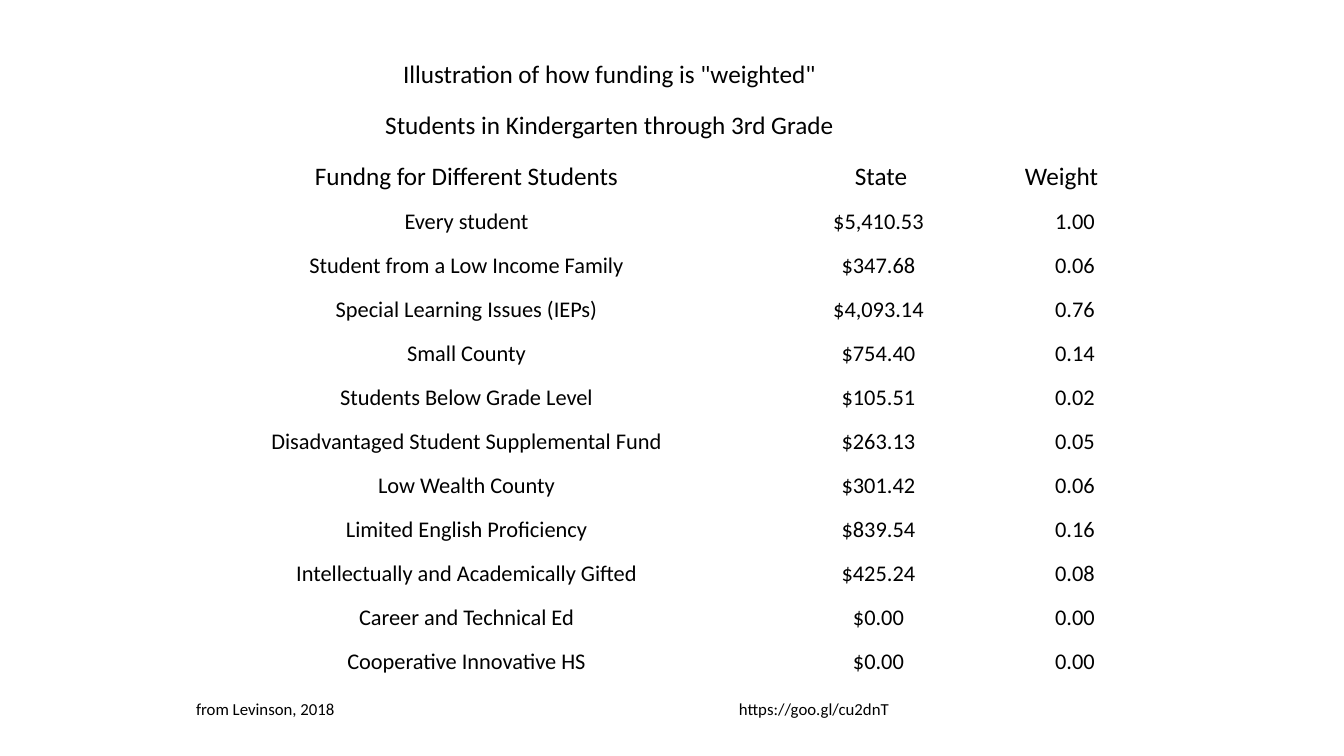
from dataclasses import dataclass

from pptx import Presentation
from pptx.dml.color import RGBColor
from pptx.enum.text import MSO_ANCHOR, PP_ALIGN
from pptx.util import Pt

PX = 12192000 / 1344


@dataclass(frozen=True)
class Theme:
    font: str = "Calibri"
    ink: RGBColor = RGBColor(0, 0, 0)
    heading: int = 18
    body: int = 16
    source: int = 12


THEME = Theme()

TITLES = ['Illustration of how funding is "weighted"',
          "Students in Kindergarten through 3rd Grade"]
HEADERS = ["Fundng for Different Students", "State", "Weight"]
FUNDING = [
    ("Every student", 5410.53, 1.00),
    ("Student from a Low Income Family", 347.68, 0.06),
    ("Special Learning Issues (IEPs)", 4093.14, 0.76),
    ("Small County", 754.40, 0.14),
    ("Students Below Grade Level", 105.51, 0.02),
    ("Disadvantaged Student Supplemental Fund", 263.13, 0.05),
    ("Low Wealth County", 301.42, 0.06),
    ("Limited English Proficiency", 839.54, 0.16),
    ("Intellectually and Academically Gifted", 425.24, 0.08),
    ("Career and Technical Ed", 0, 0),
    ("Cooperative Innovative HS", 0, 0),
]
SOURCE = ["from Levinson, 2018", "https://goo.gl/cu2dnT"]

COLUMN_WIDTHS = [543, 286, 107]
HEADING_HEIGHT, BODY_HEIGHT = 51, 44


def px(n):
    return round(n * PX)


def clear_cell(cell):
    """Remove the table style's fill and tighten the cell margins."""
    cell.fill.background()
    cell.vertical_anchor = MSO_ANCHOR.BOTTOM
    cell.margin_left = cell.margin_right = cell.margin_top = px(1)
    cell.margin_bottom = 0


def write_cell(cell, text, size, align=PP_ALIGN.CENTER):
    p = cell.text_frame.paragraphs[0]
    p.text = text
    p.alignment = align
    for r in p.runs:
        r.font.name = THEME.font
        r.font.size = Pt(size)
        r.font.color.rgb = THEME.ink


def add_funding_table(slide, left, top):
    heading_count = len(TITLES) + 1
    heights = [HEADING_HEIGHT] * heading_count + [BODY_HEIGHT] * (len(FUNDING) + 1)
    table = slide.shapes.add_table(
        len(heights), len(COLUMN_WIDTHS), px(left), px(top),
        px(sum(COLUMN_WIDTHS)), px(sum(heights))).table
    table.first_row = table.horz_banding = False
    for column, width in zip(table.columns, COLUMN_WIDTHS):
        column.width = px(width)
    for row, height in zip(table.rows, heights):
        row.height = px(height)
    for cell in table.iter_cells():
        clear_cell(cell)

    for i, title in enumerate(TITLES):
        table.cell(i, 0).merge(table.cell(i, 1))
        write_cell(table.cell(i, 0), title, THEME.heading)
    for j, header in enumerate(HEADERS):
        align = PP_ALIGN.LEFT if header == "Weight" else PP_ALIGN.CENTER
        write_cell(table.cell(len(TITLES), j), header, THEME.heading, align)
    for i, (group, amount, weight) in enumerate(FUNDING, heading_count):
        for j, text in enumerate([group, f"${amount:,.2f} ", f"{weight:.2f} "]):
            write_cell(table.cell(i, j), text, THEME.body)
    for j, text in enumerate(SOURCE):
        write_cell(table.cell(len(heights) - 1, j), text, THEME.source, PP_ALIGN.LEFT)


def main():
    prs = Presentation()
    prs.slide_width, prs.slide_height = px(1344), px(756)
    slide = prs.slides.add_slide(prs.slide_layouts[6])
    add_funding_table(slide, 195, 39)
    prs.save("out.pptx")


if __name__ == "__main__":
    main()
